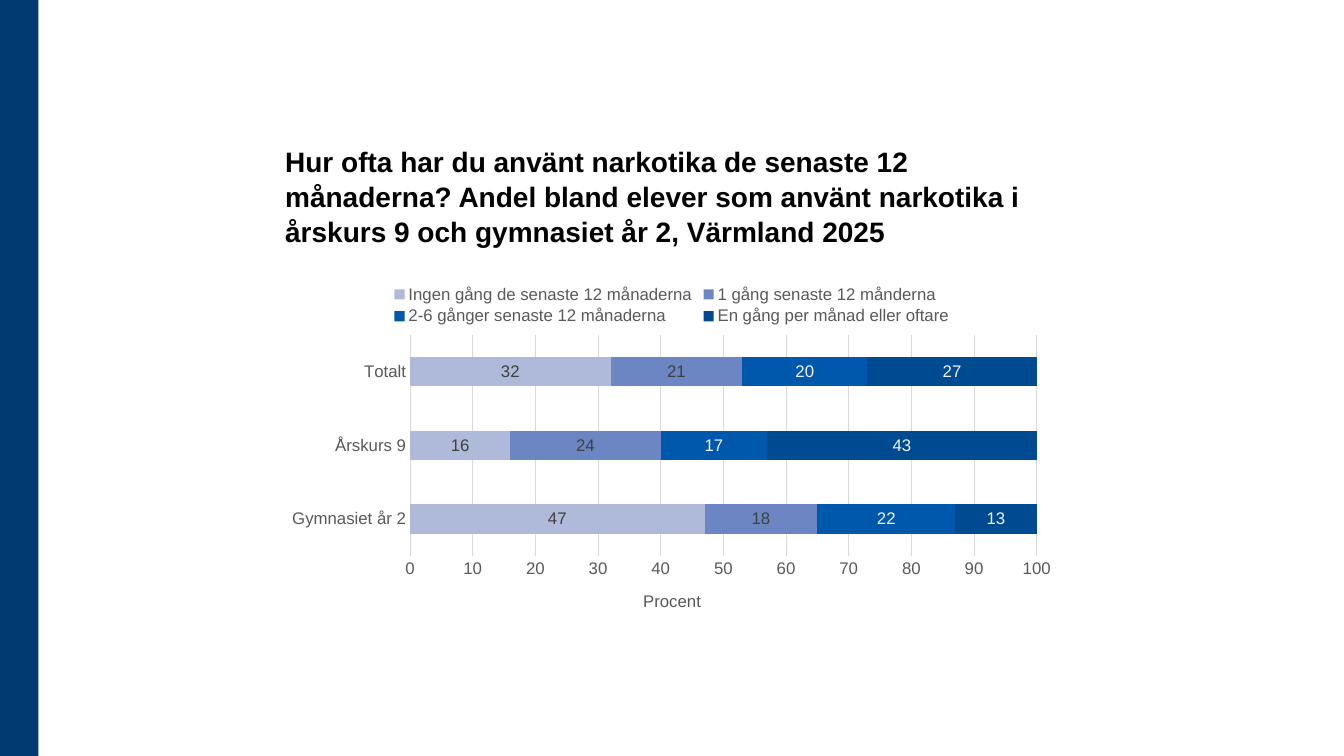
"""Build a slide with a stacked bar chart of drug use frequency among pupils."""
from lxml.etree import SubElement
from pptx import Presentation
from pptx.chart.data import CategoryChartData
from pptx.dml.color import RGBColor
from pptx.enum.chart import XL_CHART_TYPE, XL_LABEL_POSITION, XL_LEGEND_POSITION, XL_TICK_MARK
from pptx.enum.shapes import MSO_SHAPE
from pptx.enum.text import MSO_ANCHOR
from pptx.oxml.ns import qn
from pptx.util import Pt

COLORS = {
    "band": "003A70", "title": "000000", "axis": "595959", "grid": "D9D9D9",
    "dark label": "404040", "light label": "F2F2F2",
    "never": "AFB9DA", "once": "6C86C4", "some": "0058AC", "monthly": "004A91",
}
CATEGORIES = ["Gymnasiet år 2", "Årskurs 9", "Totalt"]
SERIES = [
    ("Ingen gång de senaste 12 månaderna", (47, 16, 32), "never", "dark label"),
    ("1 gång senaste 12 månderna", (18, 24, 21), "once", "dark label"),
    ("2-6 gånger senaste 12 månaderna", (22, 17, 20), "some", "light label"),
    ("En gång per månad eller oftare", (13, 43, 27), "monthly", "light label"),
]


def style_font(font, size, color, bold=False):
    font.name = "Arial"
    font.size = Pt(size)
    font.bold = bold
    font.color.rgb = RGBColor.from_string(COLORS[color])


def place(element, position, **settings):
    for old in element.findall(qn("c:layout")):
        element.remove(old)
    layout = SubElement(element, qn("c:layout"))
    element.insert(position, layout)
    manual = SubElement(layout, qn("c:manualLayout"))
    for tag, value in settings.items():
        SubElement(manual, qn(f"c:{tag}")).set("val", str(value))


deck = Presentation()
deck.slide_width, deck.slide_height = Pt(960), Pt(540)
page = deck.slides.add_slide(deck.slide_layouts[6])

band = page.shapes.add_shape(MSO_SHAPE.RECTANGLE, Pt(0), Pt(0), Pt(27.4), Pt(540))
band.shadow.inherit = False
band.fill.solid()
band.fill.fore_color.rgb = RGBColor.from_string(COLORS["band"])
band.line.fill.background()

title_box = page.shapes.add_textbox(Pt(196.6), Pt(76.3), Pt(583.2), Pt(104.4))
title_box.text_frame.word_wrap = True
title_box.text_frame.vertical_anchor = MSO_ANCHOR.BOTTOM
para = title_box.text_frame.paragraphs[0]
para.line_spacing = 1.04
span = para.add_run()
span.text = ("Hur ofta har du använt narkotika de senaste 12 månaderna? "
             "Andel bland elever som använt narkotika i årskurs 9 "
             "och gymnasiet år 2, Värmland 2025")
style_font(span.font, 20, "title", bold=True)

chart_data = CategoryChartData(number_format="0")
chart_data.categories = CATEGORIES
for name, values, fill, label in SERIES:
    chart_data.add_series(name, values)
chart = page.shapes.add_chart(
    XL_CHART_TYPE.BAR_STACKED, Pt(196.6), Pt(195.8), Pt(566.6), Pt(254.9), chart_data
).chart
style_font(chart.font, 12, "title")
chart.has_title = False
chart.has_legend = True
chart.legend.position = XL_LEGEND_POSITION.TOP
chart.legend.include_in_layout = False
style_font(chart.legend.font, 12, "axis")

plot = chart.plots[0]
plot.gap_width = 150
plot.overlap = 100
plot.vary_by_categories = False
for series, (name, values, fill, label) in zip(plot.series, SERIES):
    series.format.fill.solid()
    series.format.fill.fore_color.rgb = RGBColor.from_string(COLORS[fill])
    labels = series.data_labels
    labels.show_value = True
    labels.position = XL_LABEL_POSITION.CENTER
    labels.number_format = "0"
    labels.number_format_is_linked = False
    style_font(labels.font, 12, label)

category_axis, value_axis = chart.category_axis, chart.value_axis
for axis in (category_axis, value_axis):
    axis.major_tick_mark = XL_TICK_MARK.NONE
    axis.minor_tick_mark = XL_TICK_MARK.NONE
    style_font(axis.tick_labels.font, 12, "axis")
value_axis.minimum_scale, value_axis.maximum_scale = 0, 100
value_axis.major_unit = 10
value_axis.tick_labels.number_format = "0"
value_axis.tick_labels.number_format_is_linked = False
value_axis.format.line.fill.background()
value_axis.has_major_gridlines = True
for line in (category_axis.format.line, value_axis.major_gridlines.format.line):
    line.color.rgb = RGBColor.from_string(COLORS["grid"])
    line.width = Pt(0.75)

span = value_axis.axis_title.text_frame.paragraphs[0].add_run()
span.text = "Procent"
style_font(span.font, 12, "axis")

title_element = value_axis.axis_title._element
place(title_element, 1, xMode="edge", yMode="edge", x=0.46, y=0.88)
plot_area = chart._chartSpace.find(f"{qn('c:chart')}/{qn('c:plotArea')}")
place(plot_area, 0, layoutTarget="inner", xMode="edge", yMode="edge",
      x=0.17, y=0.17, w=0.79, h=0.62)

deck.save("out.pptx")
